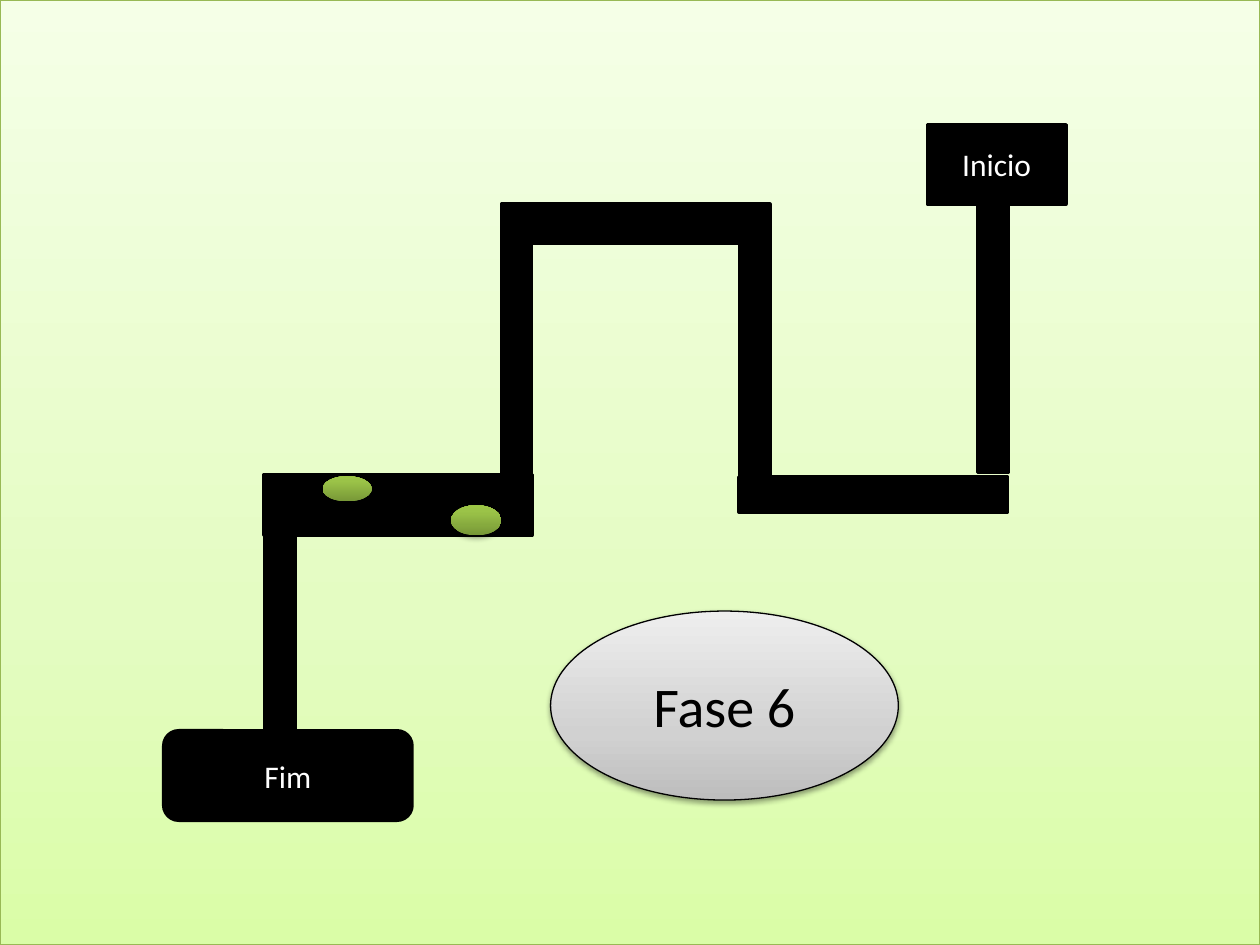
from copy import deepcopy
from dataclasses import dataclass

from lxml.etree import SubElement
from pptx import Presentation
from pptx.dml.color import RGBColor
from pptx.enum.shapes import MSO_SHAPE as Preset
from pptx.enum.text import MSO_ANCHOR, PP_ALIGN
from pptx.oxml.ns import qn
from pptx.util import Inches, Pt


@dataclass(frozen=True)
class Theme:
    font: str = "Calibri"
    label_size: int = 18
    title_size: int = 32
    black: str = "000000"
    white: str = "FFFFFF"
    backdrop_line: str = "98B955"
    backdrop: tuple = ((0, "DAFDA7"), (0.35, "E4FCC2"), (1, "F5FFE7"))
    obstacle: tuple = ((0, "779737"), (0.8, "9BC348"), (1, "9DC746"))
    badge: tuple = ((0, "BDBDBD"), (0.35, "D1D1D1"), (1, "EEEEEE"))


theme = Theme()
presentation = Presentation()
presentation.slide_width, presentation.slide_height = Inches(10), Inches(7.5)
slide = presentation.slides.add_slide(presentation.slide_layouts[6])


def add_figure(preset, box, fill, line=None, line_width=2, shadow=None):
    """Fill is one colour or bottom-to-top stops; shadow is (alpha %, distance in pt)."""
    shape = slide.shapes.add_shape(preset, *map(Inches, box))
    if isinstance(fill, str):
        shape.fill.solid()
        shape.fill.fore_color.rgb = RGBColor.from_string(fill)
    else:
        shape.fill.gradient()
        shape.fill.gradient_angle = 90
        stop_list = shape._element.spPr.find(qn("a:gradFill")).find(qn("a:gsLst"))
        stop_list.append(deepcopy(stop_list[-1]))
        for stop, (position, color) in zip(shape.fill.gradient_stops, fill):
            stop.position = position
            stop.color.rgb = RGBColor.from_string(color)
    if line:
        shape.line.color.rgb = RGBColor.from_string(line)
        shape.line.width = Pt(line_width)
    else:
        shape.line.fill.background()
    shape.shadow.inherit = False
    if shadow:
        alpha, distance = shadow
        effects = shape._element.spPr.find(qn("a:effectLst"))
        outer = SubElement(effects, qn("a:outerShdw"), blurRad=str(Pt(3.1)),
                           dist=str(Pt(distance)), dir="5400000", rotWithShape="0")
        color = SubElement(outer, qn("a:srgbClr"), val=theme.black)
        SubElement(color, qn("a:alpha"), val=str(alpha * 1000))
    return shape


def add_label(shape, text, size, color):
    frame = shape.text_frame
    frame.word_wrap = True
    frame.vertical_anchor = MSO_ANCHOR.MIDDLE
    paragraph = frame.paragraphs[0]
    paragraph.alignment = PP_ALIGN.CENTER
    run = paragraph.add_run()
    run.text = text
    run.font.name = theme.font
    run.font.size = Pt(size)
    run.font.color.rgb = RGBColor.from_string(color)


add_figure(Preset.RECTANGLE, (0, 0, 10, 7.5), theme.backdrop,
           theme.backdrop_line, 0.75, (38, 1.6))

# Maze corridors: left, top, thickness, rotation; all have the same length
corridor_length = 2.13
corridors = [
    (7.76, 1.62, 0.24, 0),
    (6.79, 2.86, 0.28, 90),
    (3.98, 1.85, 0.24, 0),
    (4.89, 0.71, 0.31, 270),
    (5.87, 1.93, 0.24, 0),
    (2.1, 3.78, 0.24, 0),
    (2.92, 2.94, 0.48, 90),
]
for left, top, thickness, rotation in corridors:
    corridor = add_figure(Preset.RECTANGLE, (left, top, thickness, corridor_length),
                          theme.black, theme.black)
    corridor.rotation = rotation

for box in [(2.56, 3.78, 0.39, 0.2), (3.58, 4.01, 0.4, 0.24)]:
    add_figure(Preset.OVAL, box, theme.obstacle, shadow=(35, 1.8))

for preset, box, text in [
    (Preset.ROUNDED_RECTANGLE, (1.3, 5.8, 1.97, 0.71), "Fim"),
    (Preset.FLOWCHART_PROCESS, (7.36, 0.99, 1.1, 0.63), "Inicio"),
]:
    endpoint = add_figure(preset, box, theme.black, theme.black)
    add_label(endpoint, text, theme.label_size, theme.white)

badge = add_figure(Preset.OVAL, (4.37, 4.85, 2.76, 1.5), theme.badge,
                   theme.black, 0.75, (38, 1.6))
add_label(badge, "Fase 6", theme.title_size, theme.black)

presentation.save("out.pptx")
